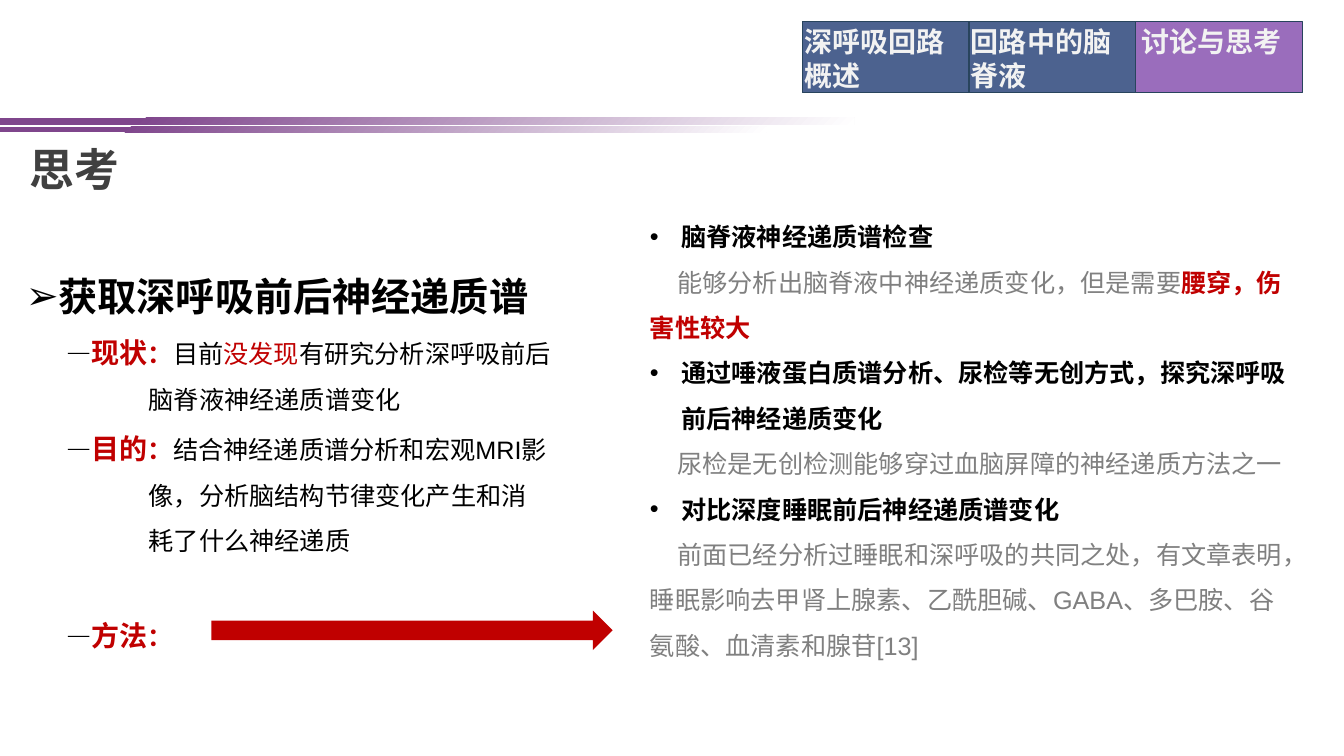
from dataclasses import dataclass
from lxml.etree import SubElement
from pptx import Presentation
from pptx.dml.color import RGBColor
from pptx.enum.shapes import MSO_SHAPE
from pptx.enum.text import MSO_ANCHOR, MSO_AUTO_SIZE, PP_ALIGN
from pptx.oxml.ns import qn
from pptx.util import Cm, Pt


@dataclass(frozen=True)
class Theme:
    font: str = "Arial"
    black: str = "000000"
    dark: str = "404040"
    grey: str = "808080"
    white: str = "FFFFFF"
    light: str = "F2F2F2"
    red: str = "C00000"
    navy: str = "002060"
    purple: str = "7030A0"
    bar: str = "7F468C"
    outline: str = "28445D"
    title: int = 32
    heading: int = 28
    label: int = 20
    body: int = 18


T = Theme()


def add_run(p, text, size=T.body, color=T.black, bold=False):
    r = p.add_run()
    r.text = text
    r.font.name = T.font
    r.font.size = Pt(size)
    r.font.bold = bold
    r.font.color.rgb = RGBColor.from_string(color)


def add_paragraph(tf, left=0, bullet=None, spacing=1.5, before=0):
    p = tf.paragraphs[0] if not tf.paragraphs[0].runs else tf.add_paragraph()
    p.alignment = PP_ALIGN.LEFT
    p.line_spacing = spacing
    p.space_before = Pt(before)
    pPr = p._p.get_or_add_pPr()
    pPr.set("marL", str(Cm(left)))
    pPr.set("indent", str(Cm(-left if bullet else 0)))
    if bullet:
        SubElement(pPr, qn("a:buFont")).set("typeface", T.font)
        SubElement(pPr, qn("a:buChar")).set("char", bullet)
    return p


prs = Presentation()
prs.slide_width, prs.slide_height = Cm(33.87), Cm(19.05)
s = prs.slides.add_slide(prs.slide_layouts[5])

title = s.shapes.title
title.left, title.top, title.width, title.height = Cm(0.5), Cm(3.6), Cm(28.6), Cm(1.48)
tf = title.text_frame
tf.auto_size = MSO_AUTO_SIZE.NONE
tf.vertical_anchor = MSO_ANCHOR.MIDDLE
add_run(add_paragraph(tf, spacing=0.9), "思考", size=T.title, color=T.dark, bold=True)

for top, width, height, flipped in [(2.97, 21.54, 0.18, False), (3.2, 19.33, 0.13, True)]:
    sp = s.shapes.add_shape(MSO_SHAPE.RECTANGLE, 0, Cm(top), Cm(width), Cm(height))
    sp.shadow.inherit = False
    sp.line.fill.background()
    sp.fill.gradient()
    for stop, position, color in zip(sp.fill.gradient_stops, (0, 0.84), (T.white, T.bar)):
        stop.position = position
        stop.color.rgb = RGBColor.from_string(color)
    grad = sp._element.spPr.find(qn("a:gradFill"))
    grad.remove(grad.find(qn("a:lin")))
    circle = SubElement(grad, qn("a:path"), path="circle")
    SubElement(circle, qn("a:fillToRect"), l="100000", t="100000")
    if flipped:
        sp._element.spPr.find(qn("a:xfrm")).set("flipV", "1")

tf = s.shapes.add_textbox(Cm(0.4), Cm(6.73), Cm(14.33), Cm(9.73)).text_frame
tf.word_wrap = True
p = add_paragraph(tf, left=0.79, bullet="➢", spacing=1)
add_run(p, "获取深呼吸前后神经递质谱", size=T.heading, bold=True)
topics = [
    ("现状", [("目前", T.black), ("没发现", T.red), ("有研究分析深呼吸前后", T.black)],
     ["脑脊液神经递质谱变化"], 0),
    ("目的", [("结合神经递质谱分析和宏观MRI影", T.black)],
     ["像，分析脑结构节律变化产生和消", "耗了什么神经递质"], 0),
    ("方法", [], [], 32.4),
]
for label, parts, more_lines, before in topics:
    p = add_paragraph(tf, left=1.03, before=before)
    add_run(p, "—", bold=True)
    add_run(p, label, size=T.label, color=T.red, bold=True)
    add_run(p, "：", color=T.red, bold=True)
    for text, color in parts:
        add_run(p, text, color=color)
    for text in more_lines:
        add_run(add_paragraph(tf, left=3.1), text)

tf = s.shapes.add_textbox(Cm(16.13), Cm(5.08), Cm(16.79), Cm(13.26)).text_frame
tf.word_wrap = True
methods = [
    ("脑脊液神经递质谱检查",
     "能够分析出脑脊液中神经递质变化，但是需要", "腰穿，伤害性较大"),
    ("通过唾液蛋白质谱分析、尿检等无创方式，探究深呼吸前后神经递质变化",
     "尿检是无创检测能够穿过血脑屏障的神经递质方法之一", ""),
    ("对比深度睡眠前后神经递质谱变化",
     "前面已经分析过睡眠和深呼吸的共同之处，有文章表明，睡眠影响去甲肾上腺素、乙酰胆碱、"
     "GABA、多巴胺、谷氨酸、血清素和腺苷[13]", ""),
]
for heading, detail, warning in methods:
    add_run(add_paragraph(tf, left=0.79, bullet="•"), heading, bold=True)
    p = add_paragraph(tf)
    p._p.get_or_add_pPr().set("indent", str(Cm(0.69)))
    add_run(p, detail, color=T.grey)
    if warning:
        add_run(p, warning, color=T.red, bold=True)

arrow = s.shapes.add_shape(MSO_SHAPE.RIGHT_ARROW, Cm(5.33), Cm(15.39), Cm(10.11), Cm(0.99))
arrow.shadow.inherit = False
arrow.fill.solid()
arrow.fill.fore_color.rgb = RGBColor.from_string(T.red)
arrow.line.fill.background()

tabs = [("深呼吸回路概述", T.navy, 0.05), ("回路中的脑脊液", T.navy, 0.05),
        ("讨论与思考", T.purple, 0.15)]
for i, (text, color, inset) in enumerate(tabs):
    sp = s.shapes.add_shape(MSO_SHAPE.RECTANGLE, Cm(20.22 + 4.2 * i), Cm(0.54), Cm(4.2), Cm(1.8))
    sp.shadow.inherit = False
    sp.fill.solid()
    sp.fill.fore_color.rgb = RGBColor.from_string(color)
    fill = sp._element.spPr.find(qn("a:solidFill"))
    SubElement(fill[0], qn("a:alpha")).set("val", "70000")
    sp.line.color.rgb = RGBColor.from_string(T.outline)
    sp.line.width = Pt(1)
    tf = sp.text_frame
    tf.word_wrap = True
    tf.vertical_anchor = MSO_ANCHOR.TOP
    tf.margin_left, tf.margin_right = Cm(inset), Cm(0.25)
    tf.margin_top, tf.margin_bottom = Cm(0.08), 0
    add_run(add_paragraph(tf, spacing=1.0), text, size=T.label, color=T.light, bold=True)

prs.save("out.pptx")
